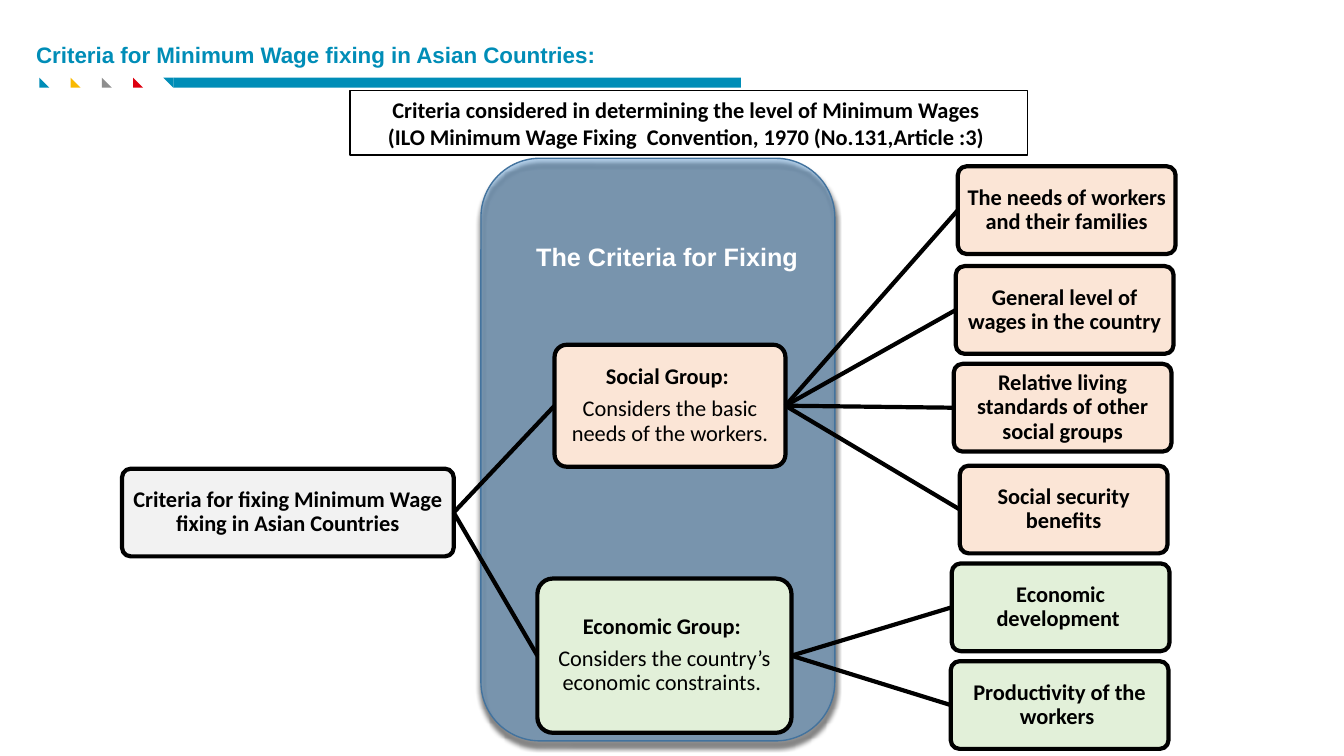
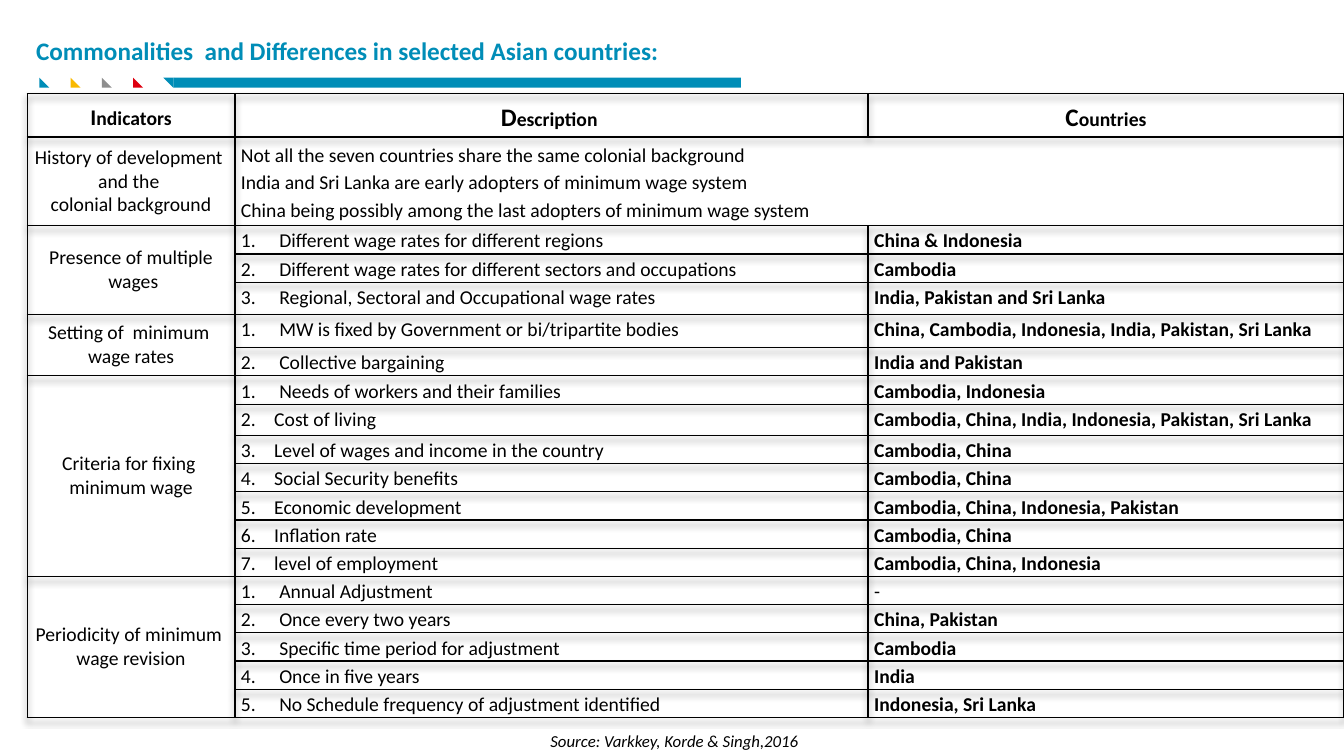
from lxml import etree
from pptx import Presentation
from pptx.dml.color import RGBColor
from pptx.enum.shapes import MSO_CONNECTOR, MSO_SHAPE
from pptx.enum.text import MSO_ANCHOR, PP_ALIGN
from pptx.oxml.ns import qn
from pptx.util import Inches, Pt

RECT = MSO_SHAPE.RECTANGLE
ROUNDED = MSO_SHAPE.ROUNDED_RECTANGLE
TRIANGLE = MSO_SHAPE.RIGHT_TRIANGLE
STRAIGHT = MSO_CONNECTOR.STRAIGHT
LEFT, CENTER = PP_ALIGN.LEFT, PP_ALIGN.CENTER
TOP, MIDDLE = MSO_ANCHOR.TOP, MSO_ANCHOR.MIDDLE
LEFT_SIDE, RIGHT_SIDE = 1, 3

COLORS = {
    "teal": "008DB7", "yellow": "F9B900", "gray": "8E8E8E", "red": "DE0010",
    "black": "000000", "white": "FFFFFF", "panel": "5B9BD5", "panel_edge": "43739E",
    "root": "F2F2F2", "social": "FBE5D6", "economic": "E2F0D9",
}

# Group name, description, colour, box, and the criteria with their boxes
GROUPS = [
    ("Social Group: ", "Considers the basic needs of the workers.", "social",
     (5.5, 3.42, 2.29, 1.21), [
         ("The needs of workers and their families", (9.5, 1.65, 2.16, 0.87)),
         ("General level of wages in the country", (9.48, 2.64, 2.16, 0.87)),
         ("Relative living standards of other social groups", (9.46, 3.61, 2.16, 0.87)),
         ("Social security benefits", (9.52, 4.62, 2.06, 0.87))]),
    ("Economic Group: ", "Considers the country’s economic constraints. ", "economic",
     (5.33, 5.74, 2.52, 1.53), [
         ("Economic development ", (9.44, 5.59, 2.16, 0.87)),
         ("Productivity of the workers ", (9.43, 6.56, 2.16, 0.87))]),
]

COLUMN_WIDTHS = [2.06, 6.28, 4.72]
ROW_HEIGHT = 0.28
TALL_ROWS = {0: 0.43, 1: 0.88, 4: 0.32, 5: 0.33, 8: 0.31}
HEADERS = [("I", "ndicators", 16), ("D", "escription ", 18), ("C", "ountries", 18)]
HISTORY = ["History of development ", "and the ", "colonial background"]
HISTORY_NOTES = [
    "Not all the seven countries share the same colonial background",
    "India and Sri Lanka are early adopters of minimum wage system",
    "China being possibly among the last adopters of minimum wage system",
]
# Indicator lines, text margin after the first item, and (description, countries) rows
INDICATORS = [
    (["Presence of multiple", " wages"], 0.38, [
        ("Different wage rates for different regions", "China & Indonesia"),
        ("Different wage rates for different sectors and occupations", "Cambodia"),
        ("Regional, Sectoral and Occupational wage rates", "India, Pakistan and Sri Lanka")]),
    (["Setting of  minimum ", "wage rates"], 0.38, [
        ("MW is fixed by Government or bi/tripartite bodies",
         "China, Cambodia, Indonesia, India, Pakistan, Sri Lanka"),
        ("Collective bargaining", "India and Pakistan")]),
    (["Criteria for fixing ", "minimum wage"], 0.33, [
        ("Needs of workers and their families", "Cambodia, Indonesia"),
        ("Cost of living", "Cambodia, China, India, Indonesia, Pakistan, Sri Lanka"),
        ("Level of wages and income in the country", "Cambodia, China"),
        ("Social Security benefits", "Cambodia, China"),
        ("Economic development", "Cambodia, China, Indonesia, Pakistan"),
        ("Inflation rate", "Cambodia, China"),
        ("level of employment", "Cambodia, China, Indonesia")]),
    (["Periodicity of minimum ", "wage revision"], 0.38, [
        ("Annual Adjustment", "-"),
        ("Once every two years", "China, Pakistan"),
        ("Specific time period for adjustment", "Cambodia"),
        ("Once in five years", "India"),
        ("No Schedule frequency of adjustment identified", "Indonesia, Sri Lanka")]),
]


def rgb(name):
    return RGBColor.from_string(COLORS[name])


def add_element(parent, tag, **attrs):
    return etree.SubElement(parent, qn(tag), {k: str(v) for k, v in attrs.items()})


def add_run(p, text, size, color="black", bold=False, italic=False, font="Calibri"):
    r = p.add_run()
    r.text = text
    f = r.font
    f.name, f.size, f.bold, f.italic = font, Pt(size), bold, italic
    f.color.rgb = rgb(color)


def add_paragraph(tf, align=LEFT, spacing=None):
    """Use the frame's first paragraph while it is empty, then append."""
    p = tf.paragraphs[-1]
    if p.runs:
        p = tf.add_paragraph()
    p.alignment = align
    if spacing:
        p.line_spacing = spacing
    return p


def add_box(slide, kind, box, fill, line=None, width=1):
    sp = slide.shapes.add_shape(kind, *map(Inches, box))
    sp.shadow.inherit = False
    sp.fill.solid()
    sp.fill.fore_color.rgb = rgb(fill)
    if line:
        sp.line.color.rgb = rgb(line)
        sp.line.width = Pt(width)
    else:
        sp.line.fill.background()
    sp.text_frame.word_wrap = True
    return sp


def add_line(slide, color, width, start=(0, 0), end=(0, 0)):
    line = slide.shapes.add_connector(STRAIGHT, *map(Inches, (*start, *end)))
    line.line.color.rgb = rgb(color)
    line.line.width = Pt(width)
    add_element(line.element.spPr, "a:effectLst")
    return line


def add_shadow(effects, blur, distance, alpha):
    shadow = add_element(effects, "a:outerShdw", blurRad=Pt(blur), dist=Pt(distance),
                         dir=90 * 60000, rotWithShape=0)
    color = add_element(shadow, "a:srgbClr", val=COLORS["black"])
    add_element(color, "a:alpha", val=alpha * 1000)


def add_text(slide, box, text, size, anchor=TOP, **style):
    tf = slide.shapes.add_textbox(*map(Inches, box)).text_frame
    tf.word_wrap = True
    tf.vertical_anchor = anchor
    add_run(add_paragraph(tf), text, size, **style)


def new_slide(prs, title, size, font, box):
    """Blank slide with the title and the coloured title band."""
    slide = prs.slides.add_slide(prs.slide_layouts[6])
    for i, color in enumerate(["teal", "yellow", "gray", "red"]):
        add_box(slide, TRIANGLE, (0.39 + 0.31 * i, 0.77, 0.1, 0.1), color)
    add_box(slide, RECT, (1.72, 0.77, 5.63, 0.1), "teal")
    add_box(slide, TRIANGLE, (1.62, 0.77, 0.1, 0.1), "teal").rotation = 180
    add_line(slide, "teal", 0.5, (1.73, 0.77), (1.73, 0.86))
    add_text(slide, box, title, size, MIDDLE, color="teal", bold=True, font=font)
    return slide


def add_node(slide, box, fill, heading, detail=None):
    sp = add_box(slide, ROUNDED, box, fill, "black", 3)
    sp.adjustments[0] = 0.1
    tf = sp.text_frame
    tf.vertical_anchor = MIDDLE
    tf.margin_left = tf.margin_right = tf.margin_top = tf.margin_bottom = Inches(0.04)
    for text, bold in ((heading, True), (detail, False)):
        if text:
            p = add_paragraph(tf, CENTER, 0.9)
            p.space_after = Pt(5.6)
            add_run(p, text, 16, bold=bold)
    return sp


def join(slide, parent, child):
    line = add_line(slide, "black", 3)
    line.begin_connect(parent, RIGHT_SIDE)
    line.end_connect(child, LEFT_SIDE)


def add_panel(slide):
    panel = add_box(slide, ROUNDED, (4.77, 1.57, 3.51, 5.78), "panel", "panel_edge")
    sp_pr = panel.element.spPr
    add_element(sp_pr.find(qn("a:solidFill"))[0], "a:alpha", val=44000)
    add_shadow(sp_pr.find(qn("a:effectLst")), 4, 4, 100)


def criteria_slide(prs):
    slide = new_slide(prs, "Criteria for Minimum Wage fixing in Asian Countries:", 16,
                      "Arial", (0.26, 0.36, 6.85, 0.37))
    add_panel(slide)
    banner = add_box(slide, RECT, (3.47, 0.9, 6.72, 0.64), "white", "black")
    for text in ("Criteria considered in determining the level of Minimum Wages ",
                 "(ILO Minimum Wage Fixing  Convention, 1970 (No.131,Article :3) "):
        add_run(add_paragraph(banner.text_frame, CENTER), text, 16, bold=True)

    root = add_node(slide, (1.21, 4.65, 3.29, 0.87), "root",
                    "Criteria for fixing Minimum Wage fixing in Asian Countries")
    for heading, detail, color, box, criteria in GROUPS:
        group = add_node(slide, box, color, heading, detail)
        join(slide, root, group)
        for text, criterion_box in criteria:
            join(slide, group, add_node(slide, criterion_box, color, text))
    add_text(slide, (5.22, 2.34, 2.93, 0.4), "The Criteria for Fixing", 18,
             color="white", bold=True, font="Arial")


def style_cell(cell):
    cell.fill.background()
    cell.margin_left = cell.margin_right = Inches(0.06)
    cell.margin_top = cell.margin_bottom = 0
    tc_pr = cell._tc.get_or_add_tcPr()
    for i, tag in enumerate(("a:lnL", "a:lnR", "a:lnT", "a:lnB")):
        border = add_element(tc_pr, tag, w=Pt(1))
        add_element(add_element(border, "a:solidFill"), "a:srgbClr", val=COLORS["black"])
        tc_pr.insert(i, border)


def fill_cell(cell, lines, align=LEFT, spacing=None, anchor=MIDDLE, bold=False):
    cell.vertical_anchor = anchor
    for text in lines:
        add_run(add_paragraph(cell.text_frame, align, spacing), text, 14, bold=bold)


def number_cell(cell, number, margin):
    p_pr = cell.text_frame.paragraphs[0]._p.get_or_add_pPr()
    p_pr.set("marL", str(Inches(margin)))
    p_pr.set("indent", str(Inches(-0.38)))
    add_element(p_pr, "a:buFont", typeface="+mj-lt")
    add_element(p_pr, "a:buAutoNum", type="arabicPeriod", startAt=number)


def add_indicator_table(slide):
    row_count = 2 + sum(len(items) for _, _, items in INDICATORS)
    heights = [TALL_ROWS.get(i, ROW_HEIGHT) for i in range(row_count)]
    table = slide.shapes.add_table(
        row_count, 3, Inches(0.27), Inches(0.93),
        Inches(sum(COLUMN_WIDTHS)), Inches(sum(heights))).table
    table.first_row = table.horz_banding = False
    tbl_pr = table._tbl.tblPr
    effects = add_element(tbl_pr, "a:effectLst")
    tbl_pr.insert(0, effects)
    add_shadow(effects, 4, 3, 40)
    for column, width in zip(table.columns, COLUMN_WIDTHS):
        column.width = Inches(width)
    for row, height in zip(table.rows, heights):
        row.height = Inches(height)
    for cell in table.iter_cells():
        style_cell(cell)

    for i, (initial, rest, size) in enumerate(HEADERS):
        cell = table.cell(0, i)
        cell.vertical_anchor = MIDDLE
        p = add_paragraph(cell.text_frame, CENTER, 1.15)
        add_run(p, initial, size, bold=True)
        add_run(p, rest, 14, bold=True)

    table.cell(1, 1).merge(table.cell(1, 2))
    fill_cell(table.cell(1, 0), HISTORY, CENTER)
    fill_cell(table.cell(1, 1), HISTORY_NOTES, spacing=1.15)

    row = 2
    for name, margin, items in INDICATORS:
        table.cell(row, 0).merge(table.cell(row + len(items) - 1, 0))
        fill_cell(table.cell(row, 0), name, CENTER)
        for number, (description, countries) in enumerate(items, 1):
            cell = table.cell(row, 1)
            fill_cell(cell, [description], spacing=1.15, anchor=TOP)
            number_cell(cell, number, 0.38 if number == 1 else margin)
            fill_cell(table.cell(row, 2), [countries], spacing=1.15, anchor=TOP,
                      bold=countries != "-")
            row += 1


def comparison_slide(prs):
    slide = new_slide(prs, "Commonalities  and Differences in selected Asian countries:",
                      18, "Calibri", (0.26, 0.3, 6.68, 0.4))
    add_indicator_table(slide)
    add_text(slide, (5.36, 7.2, 2.78, 0.3), "Source: Varkkey, Korde & Singh,2016", 12,
             italic=True)


def main():
    prs = Presentation()
    prs.slide_width, prs.slide_height = Inches(13.33), Inches(7.5)
    criteria_slide(prs)
    comparison_slide(prs)
    prs.save("out.pptx")


if __name__ == "__main__":
    main()
